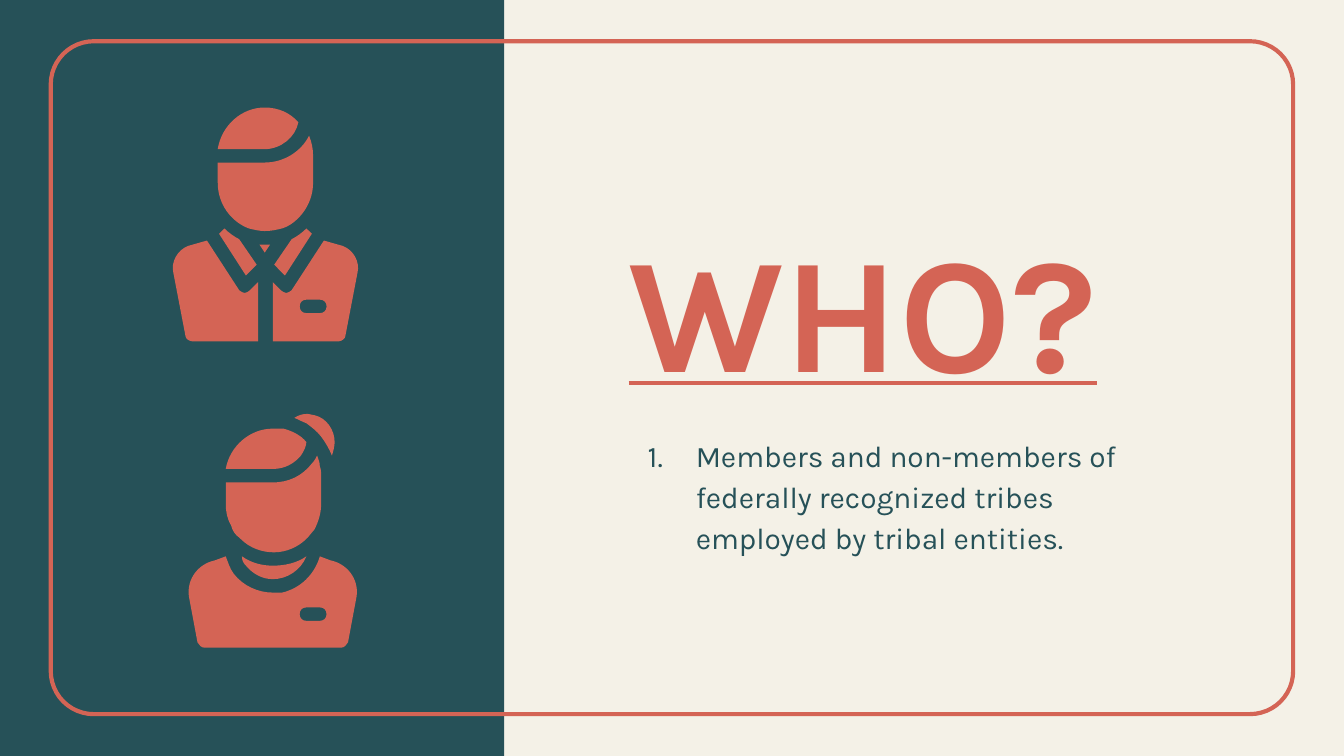
from dataclasses import dataclass

from lxml.etree import SubElement
from pptx import Presentation
from pptx.dml.color import RGBColor
from pptx.enum.shapes import MSO_SHAPE as Preset
from pptx.enum.text import MSO_ANCHOR as Anchor, MSO_AUTO_SIZE as AutoSize, PP_ALIGN as Align
from pptx.oxml.ns import qn
from pptx.util import Cm, Pt


@dataclass(frozen=True)
class Theme:
    cream: RGBColor = RGBColor.from_string("F4F1E7")
    teal: RGBColor = RGBColor.from_string("265158")
    coral: RGBColor = RGBColor.from_string("D46455")
    font: str = "Karla"
    title_size: Pt = Pt(88)
    list_size: Pt = Pt(16)
    frame_width: Pt = Pt(2.25)


theme = Theme()
ICON_UNIT = Cm(0.0254)  # icon outlines are given in hundredths of an inch


def write_text(holder, text, size, color, anchor=Anchor.TOP, bold=False,
               underline=False, numbered=False, line_spacing=1.0):
    frame = holder.text_frame
    frame.auto_size = AutoSize.NONE
    frame.word_wrap = True
    frame.vertical_anchor = anchor
    frame.margin_left = frame.margin_right = Cm(0.25)
    frame.margin_top = frame.margin_bottom = Cm(0.25)
    paragraph = frame.paragraphs[0]
    paragraph.alignment = Align.LEFT
    paragraph.line_spacing = line_spacing
    paragraph.space_before = Pt(0)
    if numbered:
        props = paragraph._p.get_or_add_pPr()
        props.set("marL", str(Cm(1.27)))
        props.set("indent", str(Cm(-0.91)))
        SubElement(SubElement(props, qn("a:buClr")), qn("a:srgbClr"), val=str(color))
        SubElement(props, qn("a:buFont"), typeface=theme.font)
        SubElement(props, qn("a:buAutoNum"), type="arabicPeriod")
    run = paragraph.add_run()
    run.text = text
    run.font.name, run.font.size = theme.font, size
    run.font.bold, run.font.underline = bold, underline
    run.font.color.rgb = color
    run._r.get_or_add_rPr().set("kern", "0")


def draw_outline(shapes, *contours):
    """Draw closed contours as one shape; a pair is a corner, six numbers a Bézier curve."""
    builder = None
    for contour in contours:
        numbers = [v * ICON_UNIT for segment in contour for v in segment]
        start, *rest = zip(numbers[::2], numbers[1::2])
        if builder is None:
            builder = shapes.build_freeform(*start, scale=1.0)
        else:
            builder.move_to(*start)
        builder.add_line_segments(rest, close=True)
    outline = builder.convert_to_shape()
    outline.shadow.inherit = False
    outline.fill.solid()
    outline.fill.fore_color.rgb = theme.coral
    outline.line.fill.background()
    # Join each curve's three straight steps into one Bézier segment
    path = next(outline._element.iter(qn("a:path")))
    steps = iter(path.findall(qn("a:lnTo")))
    for contour in contours:
        for segment in contour[1:]:
            first = next(steps)
            if len(segment) == 6:
                curve = path.makeelement(qn("a:cubicBezTo"))
                first.addprevious(curve)
                for step in (first, next(steps), next(steps)):
                    curve.append(step[0])
                    path.remove(step)


deck = Presentation()
deck.slide_width, deck.slide_height = Cm(25.4), Cm(14.29)
slide = deck.slides.add_slide(deck.slide_layouts[0])
slide.background.fill.solid()
slide.background.fill.fore_color.rgb = theme.cream
shapes = slide.shapes

# Side panel and rounded frame
panel = shapes.add_shape(Preset.RECTANGLE, 0, 0, Cm(9.53), deck.slide_height)
panel.shadow.inherit = False
panel.fill.solid()
panel.fill.fore_color.rgb = theme.teal
panel.line.fill.background()

frame = shapes.add_shape(Preset.ROUNDED_RECTANGLE, Cm(0.96), Cm(0.78), Cm(23.48), Cm(12.72))
frame.shadow.inherit = False
frame.adjustments[0] = 0.064
frame.fill.background()
frame.line.color.rgb = theme.coral
frame.line.width = theme.frame_width

# Question and answer
question, answer = shapes.title, slide.placeholders[1]
text_left, text_width, split = Cm(11.63), Cm(10.74), Cm(7.92)
question.left, question.width = text_left, text_width
question.top, question.height = Cm(2.41), Cm(5.51)
answer.left, answer.width = text_left, text_width
answer.top, answer.height = split, Cm(4.42)
write_text(question, "WHO?", theme.title_size, theme.coral,
           anchor=Anchor.BOTTOM, bold=True, underline=True)
write_text(answer, "Members and non-members of federally recognized tribes "
           "employed by tribal entities.", theme.list_size, theme.teal,
           numbered=True, line_spacing=1.15)

# Name badge, cut out of both jackets
badge = [(238, 223), (241, 223, 243, 225, 243, 228), (243, 231, 241, 233, 238, 233),
         (228, 233), (225, 233, 223, 231, 223, 228), (223, 225, 225, 223, 228, 223)]
low_badge = [tuple(v + 229 * (i % 2) for i, v in enumerate(segment)) for segment in badge]

# Man: collar and jacket are symmetric about the middle of the tie
man_middle = 197.5
collar = [(167, 170), (163, 174), (183, 205), (191, 197), (178, 178),
          (174, 176, 170, 173, 167, 170)]
jacket = [(154, 179), (140, 183), (132, 186, 127, 195, 129, 203), (138, 250),
          (138, 252, 141, 254, 143, 254), (192, 254), (192, 210), (186, 216),
          (185, 217, 183, 218, 182, 218), (181, 218, 179, 217, 178, 216)]
right_collar, right_jacket = [
    [tuple(v if i % 2 else 2 * man_middle - v for i, v in enumerate(segment)) for segment in half]
    for half in (collar, jacket)]
man_face = [(230, 101), (224, 113, 211, 121, 197, 121), (162, 121), (162, 136),
            (162, 152, 172, 165, 185, 170), (189, 171, 193, 172, 197, 172),
            (202, 172, 206, 171, 210, 170), (220, 167, 233, 154, 233, 136),
            (233, 116), (233, 111, 232, 106, 230, 101)]
man_hair = [(197, 80), (180, 80, 165, 93, 162, 111), (197, 111),
            (209, 111, 220, 102, 222, 91), (216, 84, 207, 80, 197, 80)]
tie = [(193, 182), (197, 188), (201, 182), (200, 182, 199, 182, 197, 182),
       (196, 182, 195, 182, 193, 182)]

# Woman
woman_hair = [(203, 319), (186, 319, 171, 332, 168, 349), (203, 349),
              (212, 349, 219, 345, 224, 339), (226, 336, 228, 332, 228, 329),
              (224, 324, 218, 321, 211, 319), (208, 319, 206, 319, 203, 319)]
woman_face = [(236, 339), (235, 341, 234, 343, 232, 345), (225, 354, 215, 359, 203, 359),
              (168, 359), (168, 375), (168, 381, 169, 386, 172, 391),
              (173, 395, 175, 398, 178, 400), (179, 401), (186, 408, 195, 411, 204, 411),
              (213, 411, 222, 407, 228, 401), (229, 400), (231, 398, 232, 396, 234, 394),
              (237, 388, 239, 382, 239, 375), (239, 354), (239, 352, 239, 349, 238, 347),
              (238, 344, 237, 342, 236, 339)]
neckline = [(228, 414), (221, 419, 212, 421, 203, 421), (195, 421, 187, 419, 180, 414),
            (180, 417, 181, 419, 183, 421), (188, 427, 195, 431, 203, 431),
            (214, 431, 224, 424, 228, 414)]
bun = [(229, 308), (225, 308, 222, 309, 219, 311), (222, 312, 225, 314, 228, 315),
       (232, 318, 236, 321, 239, 325), (242, 329, 245, 334, 247, 339),
       (248, 336, 249, 332, 249, 329), (249, 320, 243, 311, 234, 309),
       (232, 309, 231, 308, 229, 308)]
blouse = [(168, 414), (160, 417), (146, 420, 138, 433, 141, 446), (147, 478),
          (148, 480, 150, 482, 152, 482), (254, 482), (256, 482, 258, 480, 259, 478),
          (265, 446), (268, 433, 260, 420, 246, 417), (238, 414),
          (234, 428, 223, 438, 210, 441), (208, 441, 205, 441, 203, 441),
          (192, 441, 181, 436, 174, 427), (171, 423, 170, 419, 168, 414)]

man = [[right_collar], [man_face], [man_hair], [jacket], [badge, right_jacket], [collar], [tie]]
woman = [[woman_hair], [woman_face], [neckline], [bun], [low_badge, blouse]]
for part in man + woman:
    draw_outline(shapes, *part)

deck.save("out.pptx")
